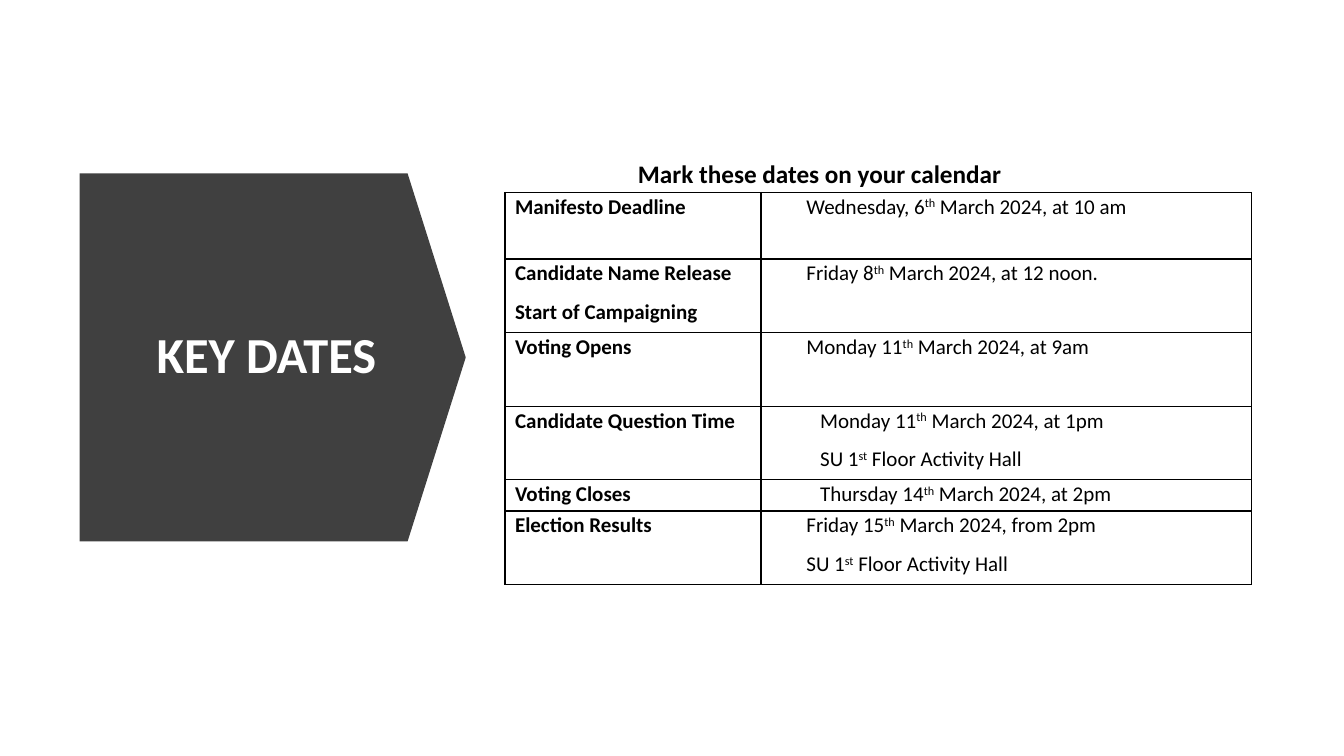
from dataclasses import dataclass

from lxml.etree import SubElement
from pptx import Presentation
from pptx.dml.color import RGBColor
from pptx.enum.shapes import MSO_SHAPE as Preset
from pptx.enum.text import MSO_ANCHOR as Anchor, MSO_AUTO_SIZE as AutoSize, PP_ALIGN as Align
from pptx.oxml.ns import qn
from pptx.util import Pt


@dataclass(frozen=True)
class Theme:
    font: str = "Calibri"
    ink: str = "000000"
    panel: str = "404040"
    panel_ink: str = "FFFFFF"
    title_size: float = 36
    heading_size: float = 18
    cell_size: float = 15
    border: float = 1


@dataclass(frozen=True)
class KeyDate:
    events: tuple[str, ...]
    details: tuple[str, ...]  # text between ^ marks is raised
    height: float = 52.6
    indent: float = 25.2


THEME = Theme()
WIDE_INDENT = 35
COLUMN_WIDTHS = (182.9, 350.6)
KEY_DATES = (
    KeyDate(("Manifesto Deadline",), ("Wednesday, 6^th^ March 2024, at 10 am",), height=47.5),
    KeyDate(("Candidate Name Release", "Start of Campaigning"),
            ("Friday 8^th^ March 2024, at 12 noon.",)),
    KeyDate(("Voting Opens",), ("Monday 11^th^ March 2024, at 9am",)),
    KeyDate(("Candidate Question Time",),
            ("Monday 11^th^ March 2024, at 1pm", "SU 1^st^ Floor Activity Hall"),
            indent=WIDE_INDENT),
    KeyDate(("Voting Closes",), ("Thursday 14^th^ March 2024, at 2pm",),
            height=22.3, indent=WIDE_INDENT),
    KeyDate(("Election Results",),
            ("Friday 15^th^ March 2024, from 2pm", "SU 1^st^ Floor Activity Hall")),
)


def write(frame, lines: tuple[str, ...], *, size: float, color: str = THEME.ink,
          bold: bool = True, align=Align.LEFT, spacing: float = 1.0,
          after: float = 0, indent: float = 0) -> None:
    """Write one paragraph per line, raising the text between ^ marks."""
    frame.word_wrap = True
    for number, line in enumerate(lines):
        para = frame.add_paragraph() if number else frame.paragraphs[0]
        para.alignment = align
        para.line_spacing = spacing
        para.space_after = Pt(after)
        if indent:
            properties = para._p.get_or_add_pPr()
            properties.set("marL", str(Pt(indent)))
            properties.set("indent", "0")
        for position, text in enumerate(line.split("^")):
            span = para.add_run()
            span.text = text
            span.font.name = THEME.font
            span.font.size = Pt(size)
            span.font.bold = bold
            span.font.color.rgb = RGBColor.from_string(color)
            if position % 2:
                span._r.get_or_add_rPr().set("baseline", "30000")


def outline_cell(cell) -> None:
    properties = cell._tc.get_or_add_tcPr()
    for side in ("lnL", "lnR", "lnT", "lnB"):
        line = SubElement(properties, qn(f"a:{side}"), w=str(Pt(THEME.border)))
        fill = SubElement(line, qn("a:solidFill"))
        SubElement(fill, qn("a:srgbClr"), val=THEME.ink)
    cell.fill.background()


def draw_title(page) -> None:
    # Arrow panel, turned to point right
    panel = page.shapes.add_shape(Preset.DOWN_ARROW, Pt(63.4), Pt(117.4), Pt(262.8), Pt(275.8))
    panel.rotation = 270
    panel.adjustments[0] = 1
    panel.adjustments[1] = 0.158
    panel.shadow.inherit = False
    panel.fill.solid()
    panel.fill.fore_color.rgb = RGBColor.from_string(THEME.panel)
    panel.line.fill.background()

    # Title on the panel, set slightly left of centre
    box = page.shapes.add_textbox(Pt(90.7), Pt(154.8), Pt(207.4), Pt(200.9))
    box.text_frame.vertical_anchor = Anchor.MIDDLE
    box.text_frame.margin_right = Pt(15.2)
    write(box.text_frame, ("KEY DATES",), size=THEME.title_size, color=THEME.panel_ink,
          align=Align.CENTER, spacing=0.9, after=6)


def draw_dates(page) -> None:
    # Table of key dates
    height = sum(date.height for date in KEY_DATES)
    table = page.shapes.add_table(len(KEY_DATES), len(COLUMN_WIDTHS), Pt(360.7), Pt(137.5),
                                  Pt(sum(COLUMN_WIDTHS)), Pt(height)).table
    table.first_row = False
    table.horz_banding = False
    for column, width in zip(table.columns, COLUMN_WIDTHS):
        column.width = Pt(width)
    for row, date in zip(table.rows, KEY_DATES):
        row.height = Pt(date.height)
        event, detail = row.cells
        for cell in (event, detail):
            cell.margin_top = cell.margin_bottom = 0
            outline_cell(cell)
        write(event.text_frame, date.events, size=THEME.cell_size, spacing=1.07, after=8)
        write(detail.text_frame, date.details, size=THEME.cell_size, bold=False,
              spacing=1.07, after=8, indent=date.indent)

    # Heading above the table
    box = page.shapes.add_textbox(Pt(448.6), Pt(109.4), Pt(383), Pt(29))
    write(box.text_frame, ("Mark these dates on your calendar",), size=THEME.heading_size)
    box.text_frame.auto_size = AutoSize.SHAPE_TO_FIT_TEXT


def main() -> None:
    deck = Presentation()
    deck.slide_width, deck.slide_height = Pt(960), Pt(540)
    page = deck.slides.add_slide(deck.slide_layouts[6])
    draw_title(page)
    draw_dates(page)
    deck.save("out.pptx")


if __name__ == "__main__":
    main()
